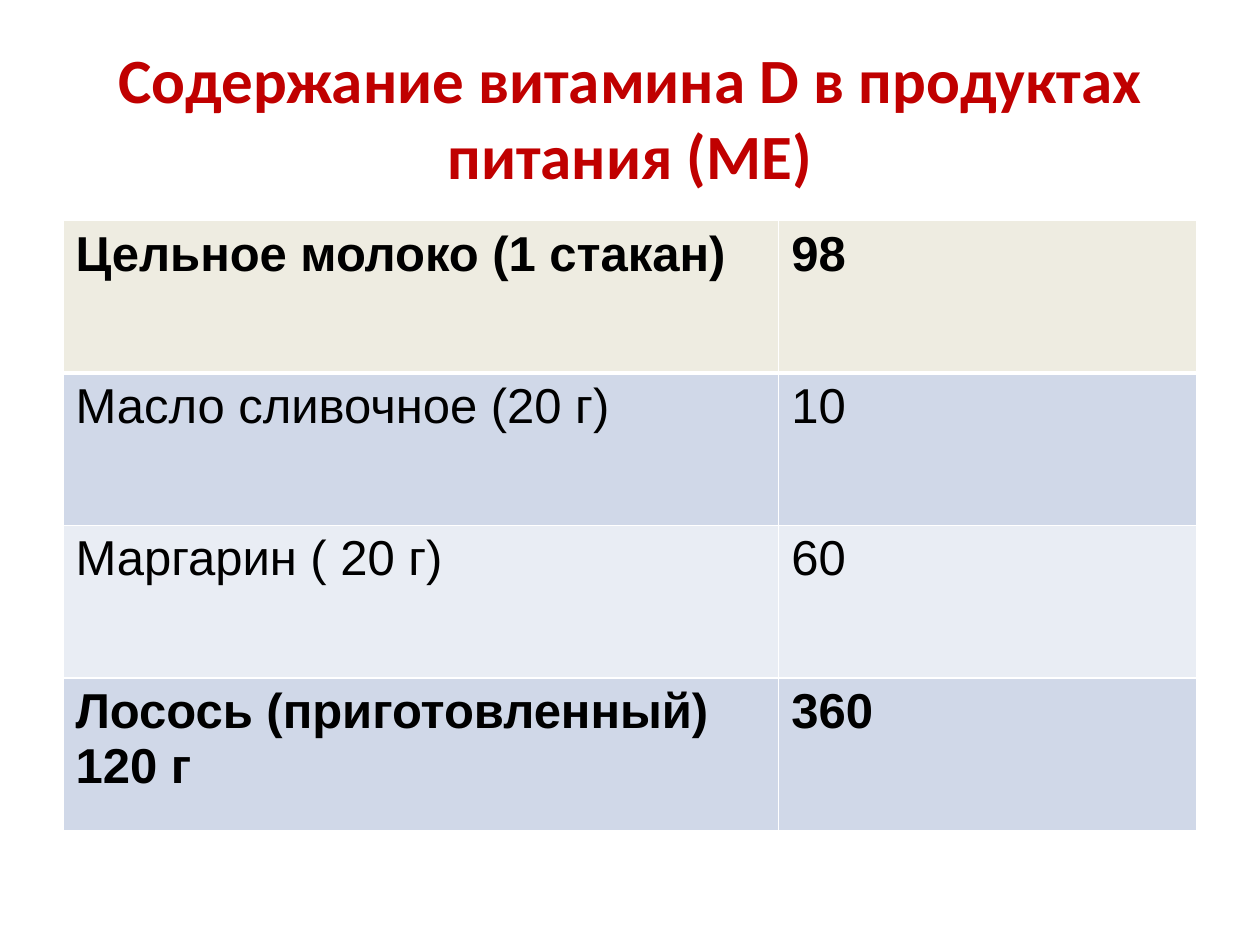
"""Build a slide with a table of vitamin D content in foods."""
from lxml.etree import SubElement
from pptx import Presentation
from pptx.dml.color import RGBColor
from pptx.enum.text import MSO_ANCHOR, PP_ALIGN
from pptx.oxml.ns import qn
from pptx.util import Pt

TITLE = "Содержание витамина D в продуктах питания (МЕ)"
TITLE_FORMAT = {"name": "Calibri", "size": Pt(36), "bold": True}
CELL_FORMAT = {"name": "Arial", "size": Pt(28)}
FOODS = [
    ("Цельное молоко (1 стакан)", "98", "EEECE1", True),
    ("Масло сливочное (20 г)", "10", "D0D8E8", False),
    ("Маргарин ( 20 г)", "60", "E9EDF4", False),
    ("Лосось (приготовленный) 120 г", "360", "D0D8E8", True),
]
LEFT, WIDTH = 36, 648
TITLE_TOP, TITLE_HEIGHT = 21.6, 90
TABLE_TOP, ROW_HEIGHT = 126, 87.12
COLUMN_WIDTHS = [409, 239]
BORDER_COLOR, THIN, THICK = "FFFFFF", 1, 3


def color(value):
    return RGBColor.from_string(value)


def write(para, text, formats, text_color):
    span = para.add_run()
    span.text = text
    for name, value in formats.items():
        setattr(span.font, name, value)
    span.font.color.rgb = color(text_color)


def add_borders(cell, widths):
    properties = cell._tc.get_or_add_tcPr()
    for index, (side, width) in enumerate(widths.items()):
        line = properties.makeelement(qn(f"a:ln{side}"), {"w": str(Pt(width))})
        fill = SubElement(line, qn("a:solidFill"))
        SubElement(fill, qn("a:srgbClr"), val=BORDER_COLOR)
        properties.insert(index, line)


def add_title(page):
    box = page.shapes.add_textbox(Pt(LEFT), Pt(TITLE_TOP), Pt(WIDTH), Pt(TITLE_HEIGHT))
    frame = box.text_frame
    frame.word_wrap = True
    frame.vertical_anchor = MSO_ANCHOR.MIDDLE
    para = frame.paragraphs[0]
    para.alignment = PP_ALIGN.CENTER
    write(para, TITLE, TITLE_FORMAT, "C00000")


def add_food_table(page):
    height = ROW_HEIGHT * len(FOODS)
    table = page.shapes.add_table(
        len(FOODS), len(COLUMN_WIDTHS), Pt(LEFT), Pt(TABLE_TOP), Pt(WIDTH), Pt(height)
    ).table
    for column, width in zip(table.columns, COLUMN_WIDTHS):
        column.width = Pt(width)
    for index, (food, amount, fill, bold) in enumerate(FOODS):
        table.rows[index].height = Pt(ROW_HEIGHT)
        top = THICK if index == 1 else THIN
        bottom = THICK if index == 0 else THIN
        for cell, text in zip(table.rows[index].cells, (food, amount)):
            write(cell.text_frame.paragraphs[0], text, CELL_FORMAT | {"bold": bold}, "000000")
            cell.fill.solid()
            cell.fill.fore_color.rgb = color(fill)
            add_borders(cell, {"L": THIN, "R": THIN, "T": top, "B": bottom})


def main():
    deck = Presentation()
    deck.slide_width, deck.slide_height = Pt(720), Pt(540)
    page = deck.slides.add_slide(deck.slide_layouts[6])
    add_title(page)
    add_food_table(page)
    deck.save("out.pptx")


if __name__ == "__main__":
    main()
